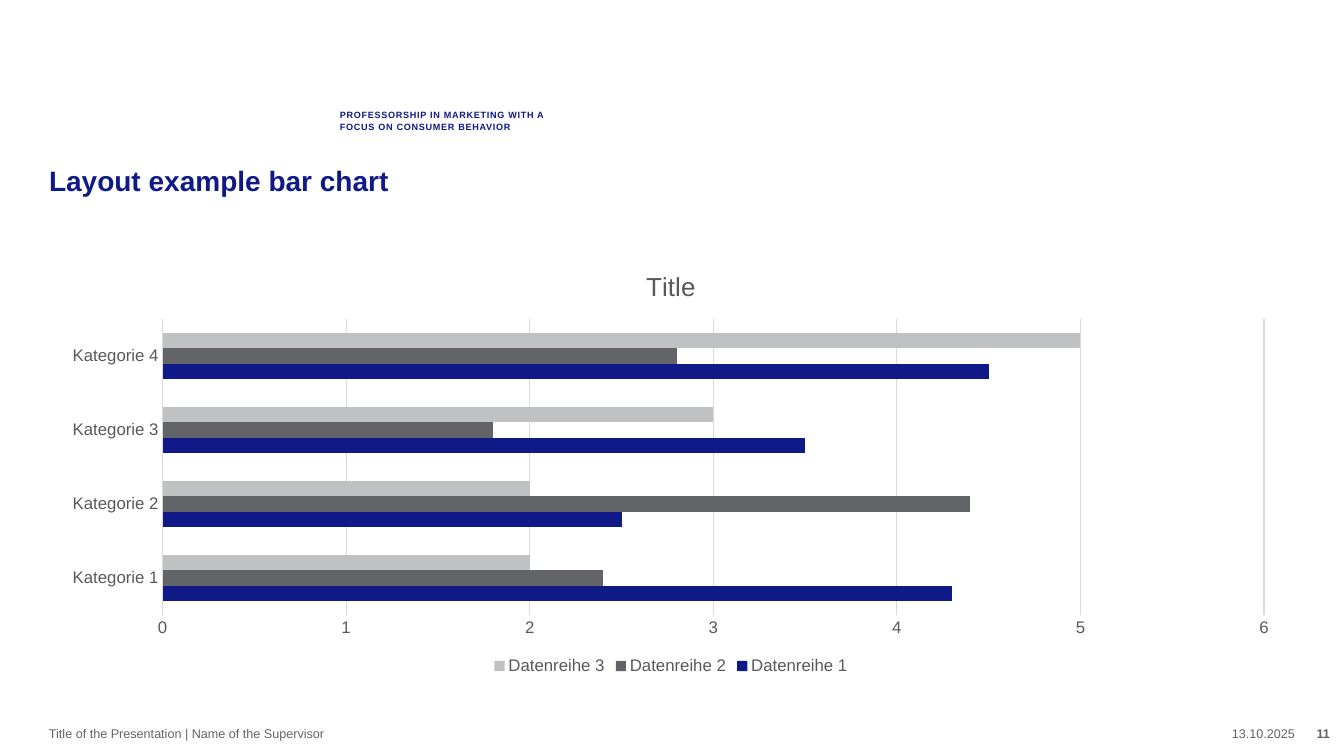
import pptx
import pptx.chart.data
import pptx.dml.color
import pptx.enum.chart
import pptx.enum.text
import pptx.oxml
import pptx.oxml.ns
import pptx.util

PX_PER_INCH = 100.8
FONT = "Arial"
COLORS = {
    "navy": "0F1987",
    "gray": "626468",
    "silver": "C0C1C3",
    "label": "595959",
    "grid": "D9D9D9",
}
CATEGORIES = ["Kategorie 1", "Kategorie 2", "Kategorie 3", "Kategorie 4"]
SERIES = [
    ("Datenreihe 1", (4.3, 2.5, 3.5, 4.5), "navy"),
    ("Datenreihe 2", (2.4, 4.4, 1.8, 2.8), "gray"),
    ("Datenreihe 3", (2, 2, 3, 5), "silver"),
]
ANCHOR = pptx.enum.text.MSO_ANCHOR
ALIGN = pptx.enum.text.PP_ALIGN


def px(length):
    return pptx.util.Emu(round(length * 914400 / PX_PER_INCH))


def rgb(name):
    return pptx.dml.color.RGBColor.from_string(COLORS[name])


def format_font(font, size, color, bold=False):
    font.name = FONT
    font.size = pptx.util.Pt(size)
    font.bold = bold
    font.color.rgb = rgb(color)


def write_text(shape, text, size=9, color="gray", bold=False, align=ALIGN.LEFT,
               anchor=ANCHOR.MIDDLE, insets=(0, 0, 0, 0), line_spacing=None,
               tracking=None):
    """Insets are left, top, right, bottom in px; tracking is in points."""
    frame = shape.text_frame
    frame.word_wrap = True
    frame.auto_size = pptx.enum.text.MSO_AUTO_SIZE.NONE
    frame.vertical_anchor = anchor
    (frame.margin_left, frame.margin_top,
     frame.margin_right, frame.margin_bottom) = map(px, insets)
    paragraph = frame.paragraphs[0]
    paragraph.alignment = align
    if line_spacing:
        paragraph.line_spacing = line_spacing
    run = paragraph.add_run()
    run.text = text
    format_font(run.font, size, color, bold)
    if tracking:
        run.font._element.set("spc", str(round(tracking * 100)))


def add_title(slide, text, box):
    title = slide.shapes.title
    title.left, title.top, title.width, title.height = map(px, box)
    write_text(title, text, size=20, color="navy", bold=True, anchor=ANCHOR.TOP)


def add_label(slide, text, box, **text_format):
    write_text(slide.shapes.add_textbox(*map(px, box)), text, **text_format)


def place_plot(chart, chart_box, plot_box):
    """Fix the inner plot area; both boxes are in slide px."""
    left, top, width, height = chart_box
    fractions = {
        "x": (plot_box[0] - left) / width,
        "y": (plot_box[1] - top) / height,
        "w": plot_box[2] / width,
        "h": plot_box[3] / height,
    }
    modes = '<c:xMode val="edge"/><c:yMode val="edge"/>'
    sizes = "".join(f'<c:{key} val="{value:.3f}"/>' for key, value in fractions.items())
    layout = pptx.oxml.parse_xml(
        f'<c:layout {pptx.oxml.ns.nsdecls("c")}><c:manualLayout>'
        f'<c:layoutTarget val="inner"/>{modes}{sizes}</c:manualLayout></c:layout>')
    plot_area = chart._chartSpace.chart.plotArea
    for old_layout in plot_area.findall(pptx.oxml.ns.qn("c:layout")):
        plot_area.remove(old_layout)
    plot_area.insert(0, layout)


def format_axes(chart):
    for axis in (chart.category_axis, chart.value_axis):
        axis.major_tick_mark = pptx.enum.chart.XL_TICK_MARK.NONE
        axis.minor_tick_mark = pptx.enum.chart.XL_TICK_MARK.NONE
        format_font(axis.tick_labels.font, 12, "label")
    chart.category_axis.has_major_gridlines = False
    chart.value_axis.has_major_gridlines = True
    chart.value_axis.minimum_scale = 0
    chart.value_axis.maximum_scale = 6
    chart.value_axis.major_unit = 1
    chart.value_axis.format.line.fill.background()
    for line in (chart.category_axis.format.line,
                 chart.value_axis.major_gridlines.format.line):
        line.color.rgb = rgb("grid")
        line.width = pptx.util.Pt(0.75)


def add_bar_chart(slide, title, box, plot_box):
    data = pptx.chart.data.CategoryChartData()
    data.categories = CATEGORIES
    for name, values, _ in SERIES:
        data.add_series(name, values)
    chart = slide.shapes.add_chart(
        pptx.enum.chart.XL_CHART_TYPE.BAR_CLUSTERED, *map(px, box), data).chart
    chart.font.name = FONT
    chart.font.size = pptx.util.Pt(10)

    chart.has_title = True
    heading = chart.chart_title.text_frame.paragraphs[0].add_run()
    heading.text = title
    format_font(heading.font, 18.6, "label")

    chart.has_legend = True
    chart.legend.position = pptx.enum.chart.XL_LEGEND_POSITION.BOTTOM
    chart.legend.include_in_layout = False
    format_font(chart.legend.font, 12, "label")

    plot = chart.plots[0]
    plot.gap_width = 182
    plot.vary_by_categories = False
    for series, (_, _, color) in zip(plot.series, SERIES):
        series.format.fill.solid()
        series.format.fill.fore_color.rgb = rgb(color)
    format_axes(chart)
    place_plot(chart, box, plot_box)


def main():
    presentation = pptx.Presentation()
    presentation.slide_width = px(1344)
    presentation.slide_height = px(756)
    slide = presentation.slides.add_slide(presentation.slide_layouts[5])

    add_title(slide, "Layout example bar chart", (49, 163, 1246, 72))
    add_label(slide, "PROFESSORSHIP IN MARKETING WITH A FOCUS ON CONSUMER BEHAVIOR",
              (336, 48, 222, 88), size=6.5, color="navy", bold=True,
              anchor=ANCHOR.BOTTOM, insets=(4, 0, 0, 4), line_spacing=1.1,
              tracking=0.5)
    add_bar_chart(slide, "Title", (48, 251, 1246, 428), (163, 319, 1102, 296))

    footer_top, footer_height = 719, 28
    add_label(slide, "Title of the Presentation | Name of the Supervisor",
              (49, footer_top, 1118, footer_height))
    add_label(slide, "13.10.2025", (1171, footer_top, 124, footer_height),
              align=ALIGN.RIGHT)
    add_label(slide, "11", (1299, footer_top, 45, footer_height), bold=True,
              align=ALIGN.RIGHT, insets=(0, 0, 14, 0))
    presentation.save("out.pptx")


if __name__ == "__main__":
    main()
